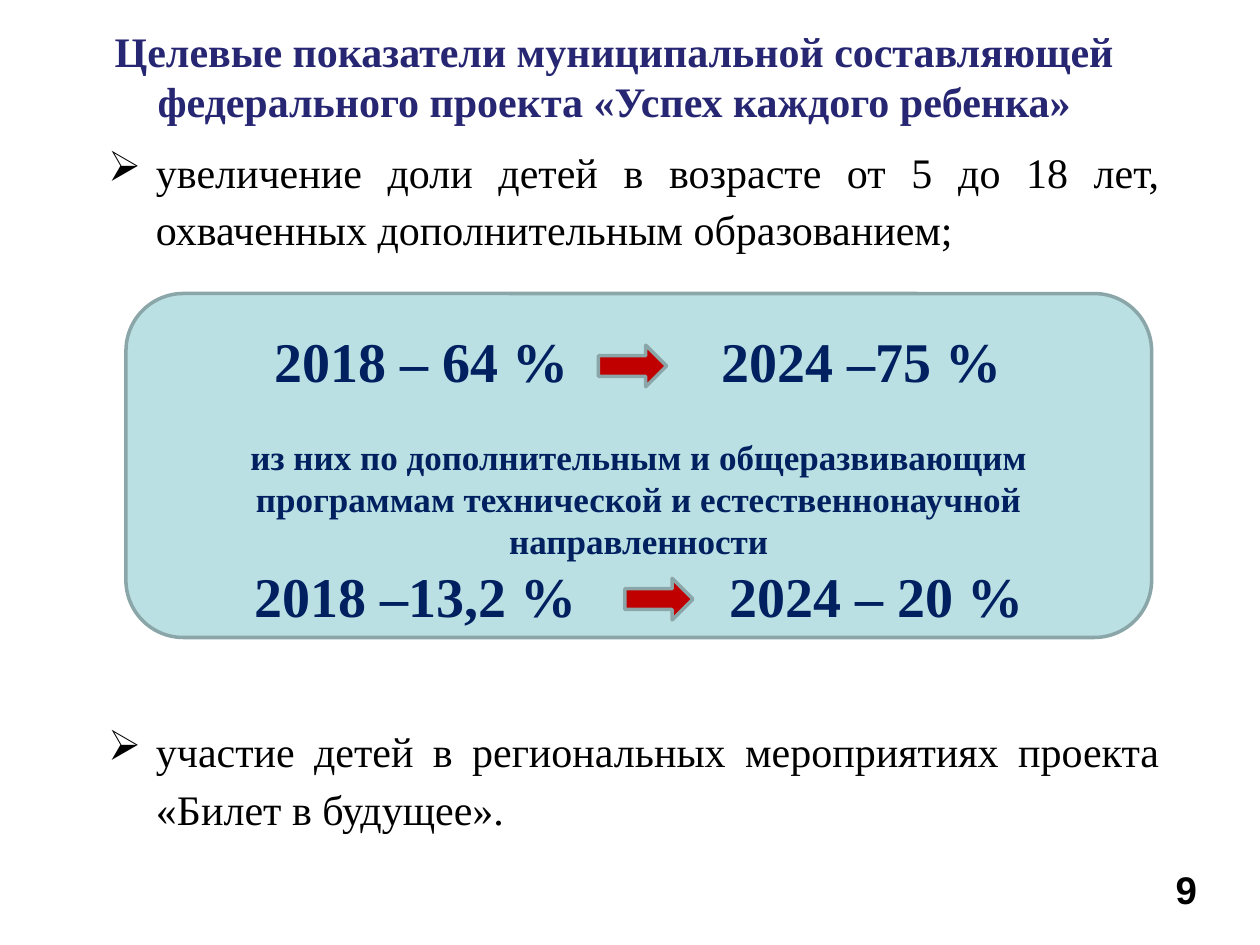
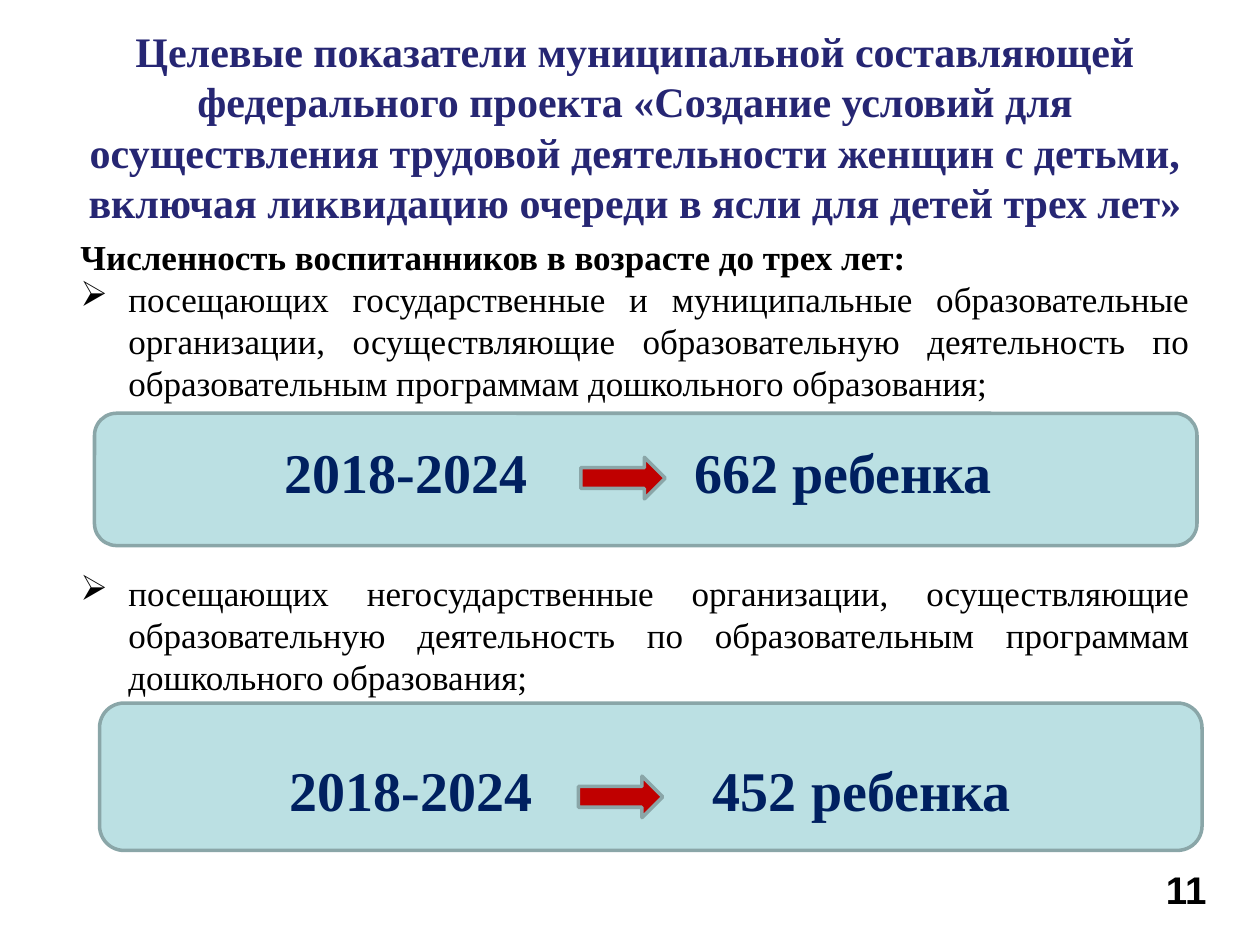
from dataclasses import dataclass

from lxml import etree
from pptx import Presentation
from pptx import util as u
from pptx.dml.color import RGBColor
from pptx.enum import shapes, text
from pptx.oxml import ns

SERIF, SANS = "Times New Roman", "Arial"
TITLE, BLACK, NAVY = "262673", "000000", "002060"
PANEL, EDGE, RED = "BBE0E3", "8AA6A8", "C00000"
CURVE = 0.0488
ALIGN = text.PP_ALIGN


@dataclass
class Box:
    x: float
    y: float
    w: float
    h: float

    def place(self) -> list:
        return [u.Inches(v) for v in (self.x, self.y, self.w, self.h)]


@dataclass
class Para:
    words: str
    size: int
    bold: bool = False
    bullet: bool = False
    before: int = 0
    lines: float = 1.0
    align: int = ALIGN.JUSTIFY
    tabs: tuple = ()
    ink: str = BLACK
    font: str = SERIF


@dataclass
class Panel:
    box: Box
    top: float
    rows: list
    arrows: list


@dataclass
class Page:
    number: str
    title: str
    head: Box
    body: Box
    items: list
    panels: list


def color(code: str) -> RGBColor:
    return RGBColor.from_string(code)


def figure(words: str, *tabs: float) -> Para:
    return Para(words, 32, True, align=ALIGN.LEFT, tabs=tabs, ink=NAVY)


def write(frame, items: list, start: float = 0) -> None:
    frame.word_wrap = True
    frame.auto_size = text.MSO_AUTO_SIZE.NONE
    frame.vertical_anchor = text.MSO_ANCHOR.TOP
    for i, item in enumerate(items):
        para = frame.add_paragraph() if i else frame.paragraphs[0]
        para.text = item.words
        props = para._p.get_or_add_pPr()
        if item.bullet:
            props.set("marL", str(u.Inches(0.38)))
            props.set("indent", str(u.Inches(-0.38)))
            etree.SubElement(props, ns.qn("a:buChar"), char="➢")
        if item.tabs:
            stops = etree.SubElement(props, ns.qn("a:tabLst"))
            for tab in item.tabs:
                etree.SubElement(stops, ns.qn("a:tab"),
                                 pos=str(u.Inches(tab - start)), algn="l")
        para.alignment = item.align
        para.line_spacing = item.lines
        para.space_before = u.Pt(item.before)
        for run in para.runs:
            font = run.font
            font.name, font.size, font.bold = item.font, u.Pt(item.size), item.bold
            font.color.rgb = color(item.ink)


def note(slide, box: Box, items: list) -> None:
    write(slide.shapes.add_textbox(*box.place()).text_frame, items)


def shape(slide, kind: int, box: Box, fill: str):
    item = slide.shapes.add_shape(kind, *box.place())
    item.shadow.inherit = False
    item.fill.solid()
    item.fill.fore_color.rgb = color(fill)
    item.line.color.rgb = color(EDGE)
    item.line.width = u.Pt(2)
    return item


def panel(slide, spec_: Panel) -> None:
    kinds = shapes.MSO_SHAPE
    box = spec_.box
    frame = shape(slide, kinds.ROUNDED_RECTANGLE, box, PANEL).text_frame
    frame.margin_top = u.Inches(spec_.top)
    write(frame, spec_.rows, box.x + 0.1 + CURVE * box.h)
    for arrow in spec_.arrows:
        shape(slide, kinds.RIGHT_ARROW, arrow, RED)


def build(deck, page: Page) -> None:
    slide = deck.slides.add_slide(deck.slide_layouts[5])
    title = slide.shapes.title
    title.left, title.top, title.width, title.height = page.head.place()
    write(title.text_frame,
          [Para(page.title, 24, True, align=ALIGN.CENTER, ink=TITLE)])
    note(slide, Box(9, 6.82, 0.83, 0.75),
         [Para(page.number, 22, True, align=ALIGN.CENTER, font=SANS)])
    note(slide, page.body, page.items)
    for item in page.panels:
        panel(slide, item)


LEAD = "Целевые показатели муниципальной составляющей федерального проекта "
WORK = "осуществляющие образовательную деятельность по образовательным программам дошкольного образования;"

PAGES = [
    Page("9", LEAD + "«Успех каждого ребенка»",
         Box(0.71, 0.15, 8.33, 0.91), Box(0.76, 1.05, 8.54, 5.8),
         [Para("увеличение доли детей в возрасте от 5 до 18 лет, охваченных дополнительным образованием;",
               24, bullet=True, lines=1.15),
          Para("участие детей в региональных мероприятиях проекта «Билет в будущее».",
               24, bullet=True, lines=1.15, before=265)],
         [Panel(Box(1, 2.33, 8.14, 2.73), 0.13,
                [figure("\t2018 – 64 %\t2024 –75 %", 2.18, 5.73),
                 Para("из них по дополнительным и общеразвивающим программам технической и естественнонаучной направленности",
                      20, True, before=24, align=ALIGN.CENTER, ink=NAVY),
                 figure("\t2018 –13,2 %\t2024 – 20 %", 2.02, 5.79)],
                [Box(4.75, 2.74, 0.54, 0.33), Box(4.96, 4.59, 0.54, 0.33)])]),
    Page("11", LEAD + "«Создание условий для осуществления трудовой деятельности женщин с детьми, "
         "включая ликвидацию очереди в ясли для детей трех лет»",
         Box(0.58, 0.15, 8.92, 1.72), Box(0.54, 1.82, 9, 4.67),
         [Para("Численность воспитанников в возрасте до трех лет:", 20, True),
          Para("посещающих государственные и муниципальные образовательные организации, " + WORK,
               20, bullet=True),
          Para("посещающих негосударственные организации, " + WORK,
               20, bullet=True, before=96)],
         [Panel(Box(0.75, 3.28, 8.75, 1.05), 0.14,
                [figure("\t2018-2024\t662 ребенка", 2.26, 5.51)],
                [Box(4.61, 3.63, 0.67, 0.33)]),
          Panel(Box(0.79, 5.58, 8.75, 1.17), 0.36,
                [figure("\t2018-2024\t452 ребенка", 2.3, 5.66)],
                [Box(4.59, 6.16, 0.67, 0.33)])]),
]


def main() -> None:
    deck = Presentation()
    deck.slide_width, deck.slide_height = u.Inches(10), u.Inches(7.5)
    for page in PAGES:
        build(deck, page)
    deck.save("out.pptx")


if __name__ == "__main__":
    main()
